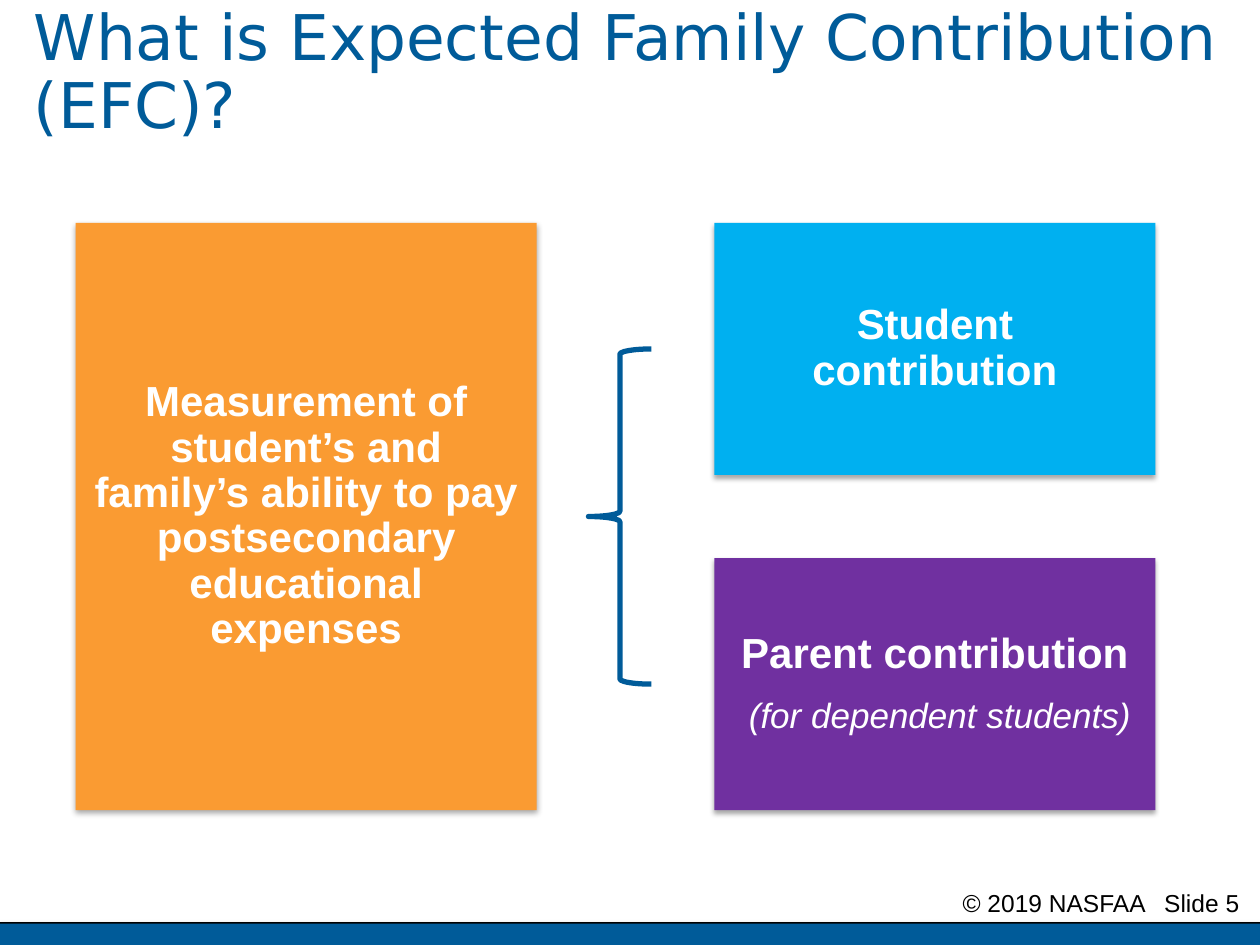
from lxml import etree
from pptx import Presentation
from pptx import util as u
from pptx.dml.color import RGBColor
from pptx.enum import shapes, text
from pptx.oxml.ns import qn

NAVY, WHITE, BLACK = "005B99", "FFFFFF", "000000"


def rgb(value):
    return RGBColor.from_string(value)


def set_shadow(s, alpha, dist):
    effects = etree.SubElement(s._element.spPr, qn("a:effectLst"))
    shadow = etree.SubElement(
        effects, qn("a:outerShdw"), blurRad=str(u.Pt(3.1)),
        dist=str(u.Pt(dist)), dir="5400000", rotWithShape="0")
    color = etree.SubElement(shadow, qn("a:srgbClr"), val=BLACK)
    etree.SubElement(color, qn("a:alpha"), val=str(alpha * 1000))


def style_runs(p, size, color, font="Arial", bold=False, italic=False):
    for r in p.runs:
        r.font.name = font
        r.font.size = u.Pt(size)
        r.font.bold = bold
        r.font.italic = italic
        r.font.color.rgb = rgb(color)


def add_title(slide, box, words):
    tf = slide.shapes.add_textbox(*map(u.Inches, box)).text_frame
    tf.word_wrap = True
    tf.vertical_anchor = text.MSO_ANCHOR.TOP
    tf.text = words
    p = tf.paragraphs[0]
    p.line_spacing = 0.9
    style_runs(p, 36, NAVY, "DejaVu Sans")


def add_card(slide, box, fill, heading, note=None):
    s = slide.shapes.add_shape(shapes.MSO_SHAPE.RECTANGLE, *map(u.Inches, box))
    s.fill.solid()
    s.fill.fore_color.rgb = rgb(fill)
    s.line.fill.background()
    set_shadow(s, 35, 1.8)
    tf = s.text_frame
    tf.word_wrap = True
    tf.vertical_anchor = text.MSO_ANCHOR.MIDDLE
    tf.margin_left = tf.margin_right = u.Inches(0.14)
    tf.text = heading
    style_runs(tf.paragraphs[0], 24, WHITE, bold=True)
    if note:
        p = tf.add_paragraph()
        p.text = note
        p.space_before = u.Pt(12)
        p._p.get_or_add_pPr().set("marL", str(u.Inches(0.08)))
        style_runs(p, 20, WHITE, italic=True)
    for p in tf.paragraphs:
        p.alignment = text.PP_ALIGN.CENTER
        p.line_spacing = 0.9


def add_contributions(slide, box):
    left, top, width, height = box
    right_width, card_height = 3.5, 2
    right = left + width - right_width
    lower = top + height - card_height
    add_card(slide, (left, top, 3.66, height), "FA9B32",
             "Measurement of student’s and family’s ability to pay "
             "postsecondary educational expenses")
    add_card(slide, (right, top, right_width, card_height), "00B0F0",
             "Student contribution")
    add_card(slide, (right, lower, right_width, card_height), "7030A0",
             "Parent contribution", "(for dependent students)")
    brace_top = top + card_height / 2
    brace = slide.shapes.add_shape(
        shapes.MSO_SHAPE.LEFT_BRACE, u.Inches(right - 1), u.Inches(brace_top),
        u.Inches(0.5), u.Inches(lower - top))
    brace.shadow.inherit = False
    brace.fill.background()
    brace.line.color.rgb = rgb(NAVY)
    brace.line.width = u.Pt(3)


def add_footer(slide, box):
    left, top, width, height = box
    bar_top = top + 0.33
    line = slide.shapes.add_connector(
        shapes.MSO_CONNECTOR.STRAIGHT, u.Inches(left), u.Inches(bar_top),
        u.Inches(left + width), u.Inches(bar_top))
    line.line.color.rgb = rgb(BLACK)
    line.line.width = u.Pt(2)
    set_shadow(line, 38, 1.6)

    text_left = left + 7.64
    s = slide.shapes.add_textbox(
        u.Inches(text_left), u.Inches(top),
        u.Inches(left + width - text_left), u.Inches(0.25))
    tf = s.text_frame
    tf.word_wrap = True
    tf.margin_left = tf.margin_right = 0
    p = tf.paragraphs[0]
    p.text = "© 2019 NASFAA\tSlide 5"
    tabs = etree.SubElement(p._p.get_or_add_pPr(), qn("a:tabLst"))
    etree.SubElement(tabs, qn("a:tab"), pos=str(u.Inches(1.6)), algn="l")
    style_runs(p, 14, BLACK)

    bar = slide.shapes.add_shape(
        shapes.MSO_SHAPE.RECTANGLE, u.Inches(left), u.Inches(bar_top),
        u.Inches(width), u.Inches(height - 0.33))
    bar.shadow.inherit = False
    bar.fill.solid()
    bar.fill.fore_color.rgb = rgb(NAVY)
    bar.line.fill.background()


def main():
    prs = Presentation()
    prs.slide_width, prs.slide_height = u.Inches(10), u.Inches(7.5)
    slide = prs.slides.add_slide(prs.slide_layouts[6])
    add_footer(slide, (0, 7, 10, 0.5))
    add_contributions(slide, (0.6, 1.77, 8.57, 4.66))
    add_title(slide, (0.17, 0, 9.67, 1.25),
              "What is Expected Family Contribution (EFC)?")
    prs.save("out.pptx")


if __name__ == "__main__":
    main()
